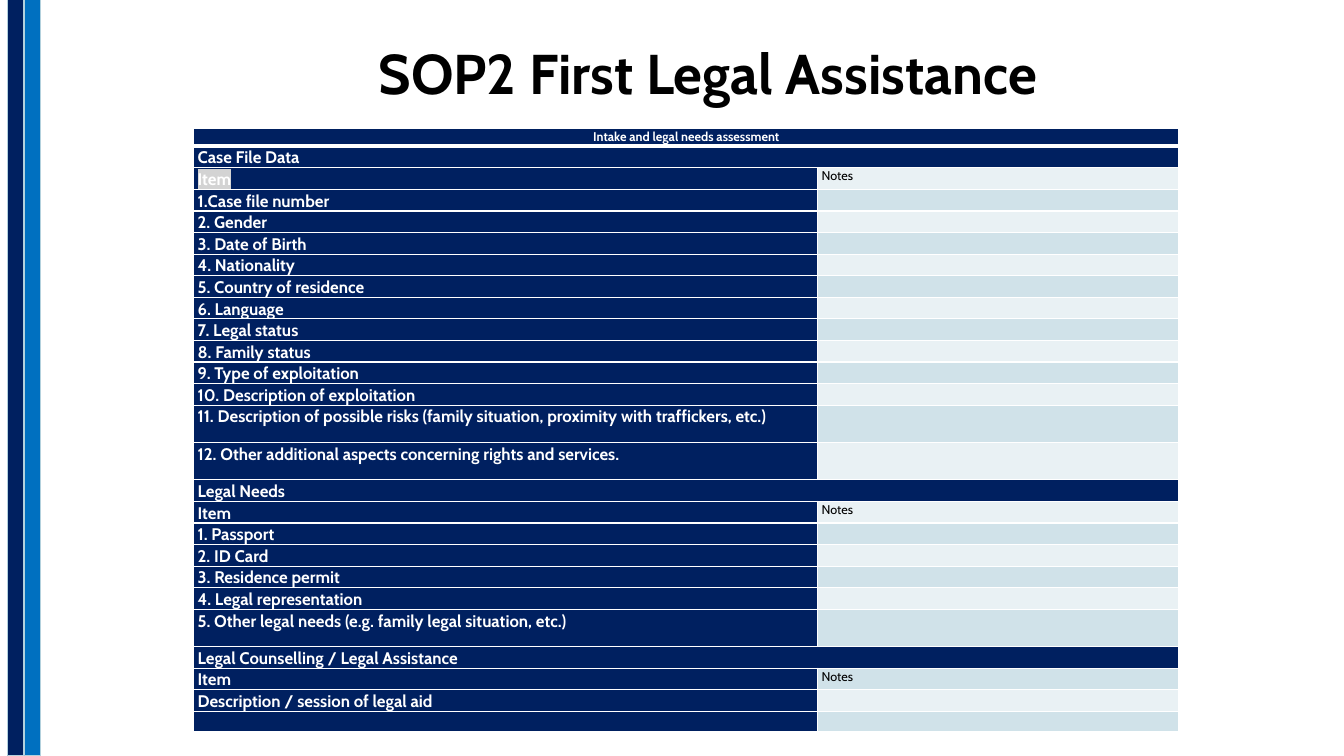
from dataclasses import dataclass

import lxml.etree
import pptx
import pptx.dml.color
import pptx.enum.shapes
import pptx.enum.text
import pptx.oxml.ns
import pptx.util

Inches = pptx.util.Inches
Align = pptx.enum.text.PP_ALIGN
qn = pptx.oxml.ns.qn


@dataclass(frozen=True)
class Theme:
    font: str = "Cabin"
    navy: str = "002060"
    blue: str = "0070C0"
    bar_line: str = "B3D1DD"
    light: str = "E9F1F4"
    mid: str = "D0E2E9"
    white: str = "FFFFFF"
    black: str = "000000"
    highlight: str = "D3D3D3"
    title_size: float = 40
    item_size: float = 12
    note_size: float = 9


@dataclass(frozen=True)
class Row:
    label: str
    notes: str = ""
    height: float = 0.18
    span: bool = False


@dataclass(frozen=True)
class Bar:
    left: float
    color: str


THEME = Theme()
TALL = 0.37
ITEM = Row("Item", notes="Notes")

ROWS = [
    Row("Intake and legal needs assessment", span=True),
    Row("Case File Data", span=True),
    ITEM,
    Row("1.Case file number"),
    Row("2. Gender"),
    Row("3. Date of Birth"),
    Row("4. Nationality"),
    Row("5. Country of residence"),
    Row("6. Language"),
    Row("7. Legal status"),
    Row("8. Family status"),
    Row("9. Type of exploitation"),
    Row("10. Description of exploitation"),
    Row("11. Description of possible risks (family situation, proximity with traffickers, etc.)", height=TALL),
    Row("12. Other additional aspects concerning rights and services.", height=TALL),
    Row("Legal Needs", span=True),
    ITEM,
    Row("1. Passport"),
    Row("2. ID Card"),
    Row("3. Residence permit"),
    Row("4. Legal representation"),
    Row("5. Other legal needs (e.g. family legal situation, etc.)", height=TALL),
    Row("Legal Counselling / Legal Assistance", span=True),
    ITEM,
    Row("Description / session of legal aid"),
    Row(""),
]
BARS = [Bar(0.07, THEME.navy), Bar(0.24, THEME.blue)]


def rgb(color: str) -> pptx.dml.color.RGBColor:
    return pptx.dml.color.RGBColor.from_string(color)


def style_text(p, size: float, color: str, bold: bool, align) -> None:
    """Format the runs, or the end mark of an empty paragraph so its row stays low."""
    p.alignment = align
    for r in p.runs:
        r.font.name = THEME.font
        r.font.size = pptx.util.Pt(size)
        r.font.bold = bold
        r.font.color.rgb = rgb(color)
    if not p.runs:
        end = lxml.etree.SubElement(p._p, qn("a:endParaRPr"), sz=str(int(size * 100)))
        lxml.etree.SubElement(end, qn("a:latin"), typeface=THEME.font)


def set_borders(cell, bottom: float = 1, top: float = 1) -> None:
    """Draw white borders; call before filling, as lines come first in the cell XML."""
    tc_pr = cell._tc.get_or_add_tcPr()
    for side, width in (("L", 1), ("R", 1), ("T", top), ("B", bottom)):
        ln = lxml.etree.SubElement(tc_pr, qn(f"a:ln{side}"), w=str(pptx.util.Pt(width)))
        fill = lxml.etree.SubElement(ln, qn("a:solidFill"))
        lxml.etree.SubElement(fill, qn("a:srgbClr"), val=THEME.white)


def write_cell(cell, text: str, fill: str, size: float, color: str, bold: bool, align=Align.JUSTIFY) -> None:
    cell.margin_left = cell.margin_right = Inches(0.04)
    cell.margin_top = cell.margin_bottom = 0
    cell.fill.solid()
    cell.fill.fore_color.rgb = rgb(fill)
    p = cell.text_frame.paragraphs[0]
    if text:
        p.text = text
    p.line_spacing = 1.07
    style_text(p, size, color, bold, align)


def highlight(r, color: str) -> None:
    mark = lxml.etree.Element(qn("a:highlight"))
    lxml.etree.SubElement(mark, qn("a:srgbClr"), val=color)
    r.font._element.find(qn("a:solidFill")).addnext(mark)


def add_title(slide) -> None:
    tb = slide.shapes.add_textbox(Inches(1.54), Inches(0.1), Inches(10.96), Inches(1.92))
    tf = tb.text_frame
    tf.word_wrap = True
    tf.vertical_anchor = pptx.enum.text.MSO_ANCHOR.MIDDLE
    tf.margin_bottom = Inches(0.66)
    tf.text = "SOP2 First Legal Assistance"
    p = tf.paragraphs[0]
    p.line_spacing = 0.9
    style_text(p, THEME.title_size, THEME.black, True, Align.CENTER)


def add_form(slide) -> None:
    height = sum(row.height for row in ROWS)
    frame = slide.shapes.add_table(len(ROWS), 2, Inches(1.92), Inches(1.27), Inches(9.77), Inches(height))
    table = frame.table
    table.first_row = table.horz_banding = False
    for column, width in zip(table.columns, (6.19, 3.58)):
        column.width = Inches(width)

    for i, row in enumerate(ROWS):
        table.rows[i].height = Inches(row.height)
        label, notes = table.cell(i, 0), table.cell(i, 1)
        for cell in (label, notes):
            set_borders(cell, bottom=3 if i == 0 else 1, top=3 if i == 1 else 1)
        size = THEME.note_size if i == 0 else THEME.item_size
        align = Align.CENTER if i == 0 else Align.JUSTIFY
        write_cell(label, row.label, THEME.navy, size, THEME.white, True, align)
        band = THEME.mid if i % 2 else THEME.light
        write_cell(notes, row.notes, THEME.navy if row.span else band, THEME.note_size, THEME.black, False)
        if row.span:
            label.merge(notes)

    first_item = table.cell(ROWS.index(ITEM), 0).text_frame.paragraphs[0]
    first_item.alignment = Align.LEFT
    highlight(first_item.runs[0], THEME.highlight)


def add_bar(slide, bar: Bar) -> None:
    rect = pptx.enum.shapes.MSO_SHAPE.RECTANGLE
    sp = slide.shapes.add_shape(rect, Inches(bar.left), 0, Inches(0.16), Inches(7.5))
    sp.shadow.inherit = False
    sp.fill.solid()
    sp.fill.fore_color.rgb = rgb(bar.color)
    sp.line.color.rgb = rgb(THEME.bar_line)
    sp.line.width = pptx.util.Pt(0.75)


def main() -> None:
    prs = pptx.Presentation()
    prs.slide_width, prs.slide_height = Inches(13.33), Inches(7.5)
    slide = prs.slides.add_slide(prs.slide_layouts[6])
    add_title(slide)
    add_form(slide)
    for bar in BARS:
        add_bar(slide, bar)
    prs.save("out.pptx")


if __name__ == "__main__":
    main()
